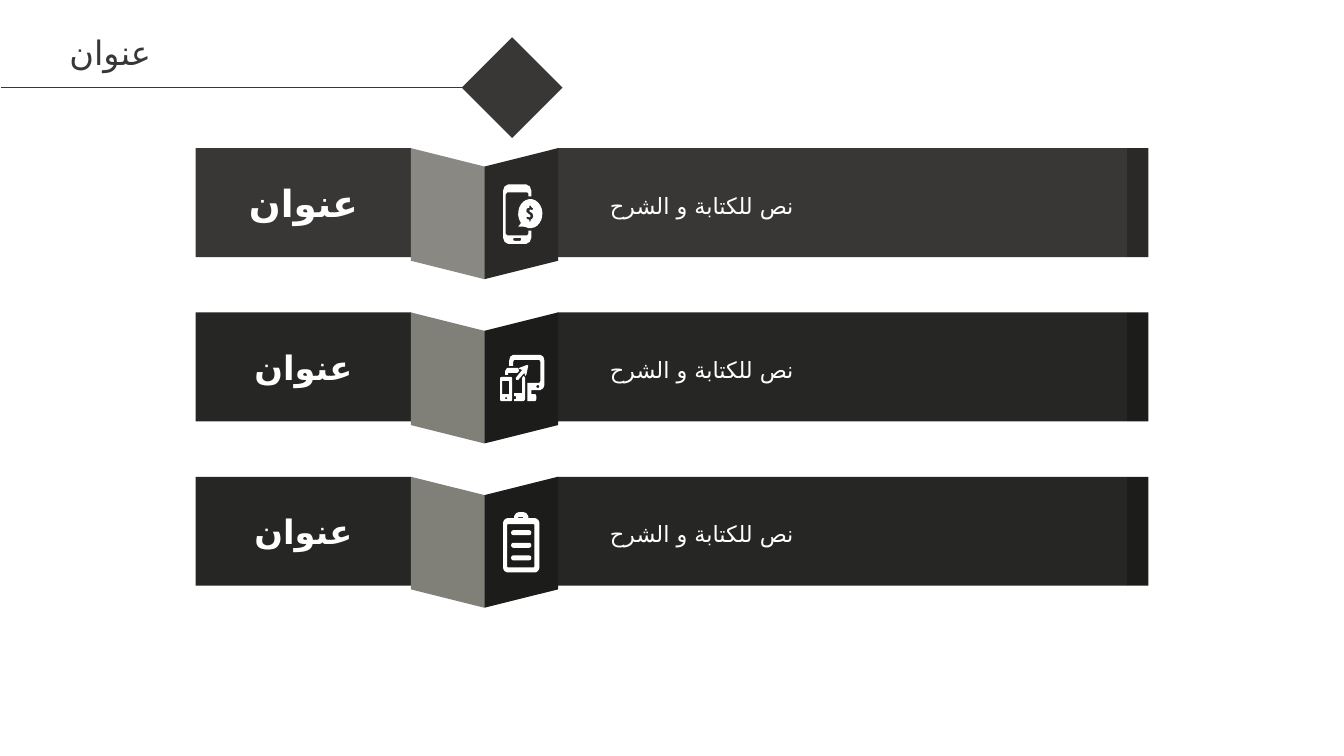
import math
from lxml import etree
from pptx import Presentation, util as u
from pptx.dml.color import RGBColor
from pptx.enum import shapes, text
from pptx.oxml.ns import qn

COLORS = {
    "white": "FFFFFF",
    "charcoal": "383735", "charcoal_light": "8A8883", "charcoal_dark": "2A2928",
    "black": "262624", "black_light": "808079", "black_dark": "1C1C1B",
}
FONT = "Noto Sans CJK SC"
ARABIC_FONT = "DejaVu Sans"
AUTO, ALIGN = shapes.MSO_SHAPE, text.PP_ALIGN

presentation = Presentation()
presentation.slide_width, presentation.slide_height = u.Inches(13.33), u.Inches(7.5)
slide = presentation.slides.add_slide(presentation.slide_layouts[6])


def add_panel(preset, left, top, width, height, color, rotation=0):
    shape = slide.shapes.add_shape(preset, *map(u.Inches, (left, top, width, height)))
    shape.shadow.inherit = False
    shape.fill.solid()
    shape.fill.fore_color.rgb = RGBColor.from_string(COLORS[color])
    shape.line.fill.background()
    shape.rotation = rotation
    return shape


def write(shape, words, size, color, frame_format, paragraph_format, bold=False):
    frame = shape.text_frame
    for name, value in frame_format.items():
        setattr(frame, name, value)
    paragraph = frame.paragraphs[0]
    for name, value in paragraph_format.items():
        setattr(paragraph, name, value)
    run = paragraph.add_run()
    run.text = words
    for name, value in {"name": FONT, "size": u.Pt(size), "bold": bold}.items():
        setattr(run.font, name, value)
    run.font.color.rgb = RGBColor.from_string(COLORS[color])
    # Arabic letters take the complex-script font
    etree.SubElement(run._r.get_or_add_rPr(), qn("a:cs"), typeface=ARABIC_FONT)


LABEL = {"vertical_anchor": text.MSO_ANCHOR.MIDDLE, "word_wrap": False}
BODY = {"vertical_anchor": text.MSO_ANCHOR.MIDDLE, "word_wrap": True,
        "margin_top": 0, "margin_bottom": 0}
TITLE = {"word_wrap": True, "auto_size": text.MSO_AUTO_SIZE.SHAPE_TO_FIT_TEXT}

# Icon outlines in hundredths of an inch: boxes are (left, top, right, bottom, radius)
bubble = [(27 + 12 * math.cos(math.radians(a)), 29 + 14.5 * math.sin(math.radians(a)))
          for a in range(-215, 121, 15)]
phone = [
    [(28, 12), (25, 12), (25, 9), (24, 8), (4, 8), (2.5, 10), (2.5, 49), (4, 50.5),
     (24, 50.5), (25, 49), (25, 46), (28, 46), (28, 53), (26.5, 57), (23, 59), (5, 59),
     (1.5, 57), (0, 53), (0, 6), (1.5, 2), (5, 0), (23, 0), (26.5, 2), (28, 6)],
    (10, 53, 18, 56, 1.5),
    bubble + [(20, 42), (15, 42), (18, 38)],
    # dollar sign
    [(26, 21), (26, 23), (23.5, 24), (23, 27), (25, 29), (27, 30.5), (27, 32.5),
     (25.5, 32.5), (24, 32), (23, 33), (24, 34.5), (26, 35), (26, 37), (27, 37),
     (27.5, 35), (29, 34), (30, 31.5), (29, 28.5), (26.5, 27), (26, 25.5),
     (27, 25), (29, 25.5), (30, 24), (28, 22.5), (27.5, 21)],
]
devices = [
    (0, 22, 12, 46, 1.5), (2, 26, 9, 39, 0), (5, 42, 7, 44, 1),
    [(23, 21), (24.5, 22), (25, 23), (25, 43), (24.5, 45), (23, 46), (14, 46), (14, 44),
     (15.5, 44), (16, 42.5), (15.5, 41), (14, 41), (14, 38), (22, 38), (22, 23)],
    [(7, 13), (18, 13), (19, 16), (17, 18), (8, 18), (8, 20), (5, 20), (5, 16)],
    [(27, 10), (28, 11), (26, 20), (25, 21), (24, 18), (18, 25), (16, 25), (15.5, 23),
     (22, 15), (19, 14), (19, 13)],
    [(13, 0), (40, 0), (43, 2), (44, 6), (44, 30), (43, 33), (40, 35), (31, 35),
     (31, 39), (35, 39), (36, 41), (36, 44), (35, 46), (27, 46), (27, 28), (39, 28),
     (40, 26), (40, 7), (39, 5), (14, 5), (13, 7), (13, 11), (9, 11), (9, 6), (10, 2)],
    (36, 30, 39, 33, 1.5),
]
clipboard = [
    (0, 6, 36, 60, 5), (4, 12, 31, 55, 1),
    [(11, 6), (11, 4), (13, 1), (16, 0), (20, 0), (23, 1), (25, 4), (25, 6)],
    (15, 5, 20, 6, 0),
] + [(8, top, 28, top + 5, 2.5) for top in (18, 30.5, 43)]

# Three folded ribbons: label size, colour family, icon, icon left, icon drop
ribbons = [
    (26.7, "charcoal", phone, 4.99, 0.36),
    (24, "black", devices, 4.96, 0.42),
    (24, "black", clipboard, 4.99, 0.35),
]
for row, (size, color, icon, icon_left, icon_drop) in enumerate(ribbons):
    top = 1.47 + 1.63 * row
    label = add_panel(AUTO.RECTANGLE, 1.94, top, 2.14, 1.08, color)
    write(label, "عنوان", size, "white", LABEL, {"alignment": ALIGN.CENTER}, bold=True)
    add_panel(AUTO.RECTANGLE, 5.53, top, 5.65, 1.08, color)
    add_panel(AUTO.PARALLELOGRAM, 3.79, top + 0.285, 1.3, 0.73, color + "_light", 90)
    fold = add_panel(AUTO.PARALLELOGRAM, 4.52, top + 0.285, 1.3, 0.73, color + "_dark", 270)
    fold._element.spPr.find(qn("a:xfrm")).set("flipV", "1")
    add_panel(AUTO.RECTANGLE, 11.18, top, 0.21, 1.08, color + "_dark")
    body = slide.shapes.add_textbox(*map(u.Inches, (5.95, top + 0.265, 3.35, 0.55)))
    write(body, "نص للكتابة و الشرح", 16, "white", BODY,
          {"alignment": ALIGN.LEFT, "line_spacing": 1.2})

    # Icon: one freeform, inner outlines become holes
    builder = None
    for outline in icon:
        if isinstance(outline, tuple):
            x1, y1, x2, y2, radius = outline
            corners = [(x2 - radius, y2 - radius, 0), (x1 + radius, y2 - radius, 90),
                       (x1 + radius, y1 + radius, 180), (x2 - radius, y1 + radius, 270)]
            outline = [(x + radius * math.cos(math.radians(start + turn)),
                        y + radius * math.sin(math.radians(start + turn)))
                       for x, y, start in corners for turn in range(0, 91, 15)]
        points = [(x * 10, y * 10) for x, y in outline]
        if builder is None:
            builder = slide.shapes.build_freeform(*points[0], scale=u.Inches(0.001))
        else:
            builder.move_to(*points[0])
        builder.add_line_segments(points[1:], close=True)
    drawing = builder.convert_to_shape(u.Inches(icon_left), u.Inches(top + icon_drop))
    drawing.shadow.inherit = False
    drawing.fill.solid()
    drawing.fill.fore_color.rgb = RGBColor.from_string(COLORS["white"])
    drawing.line.fill.background()

# Heading with rule and diamond
rule = slide.shapes.add_connector(shapes.MSO_CONNECTOR.STRAIGHT,
                                  *map(u.Inches, (0.01, 0.87, 4.65, 0.87)))
rule.line.color.rgb = RGBColor.from_string(COLORS["charcoal"])
rule.line.width = u.Pt(0.5)
etree.SubElement(rule._element.spPr, qn("a:effectLst"))
add_panel(AUTO.DIAMOND, 4.58, 0.37, 1, 1, "charcoal")
heading = slide.shapes.add_textbox(*map(u.Inches, (0.59, 0.27, 3.82, 0.5)))
write(heading, "عنوان", 24, "charcoal", TITLE, {"alignment": ALIGN.JUSTIFY})

presentation.save("out.pptx")
